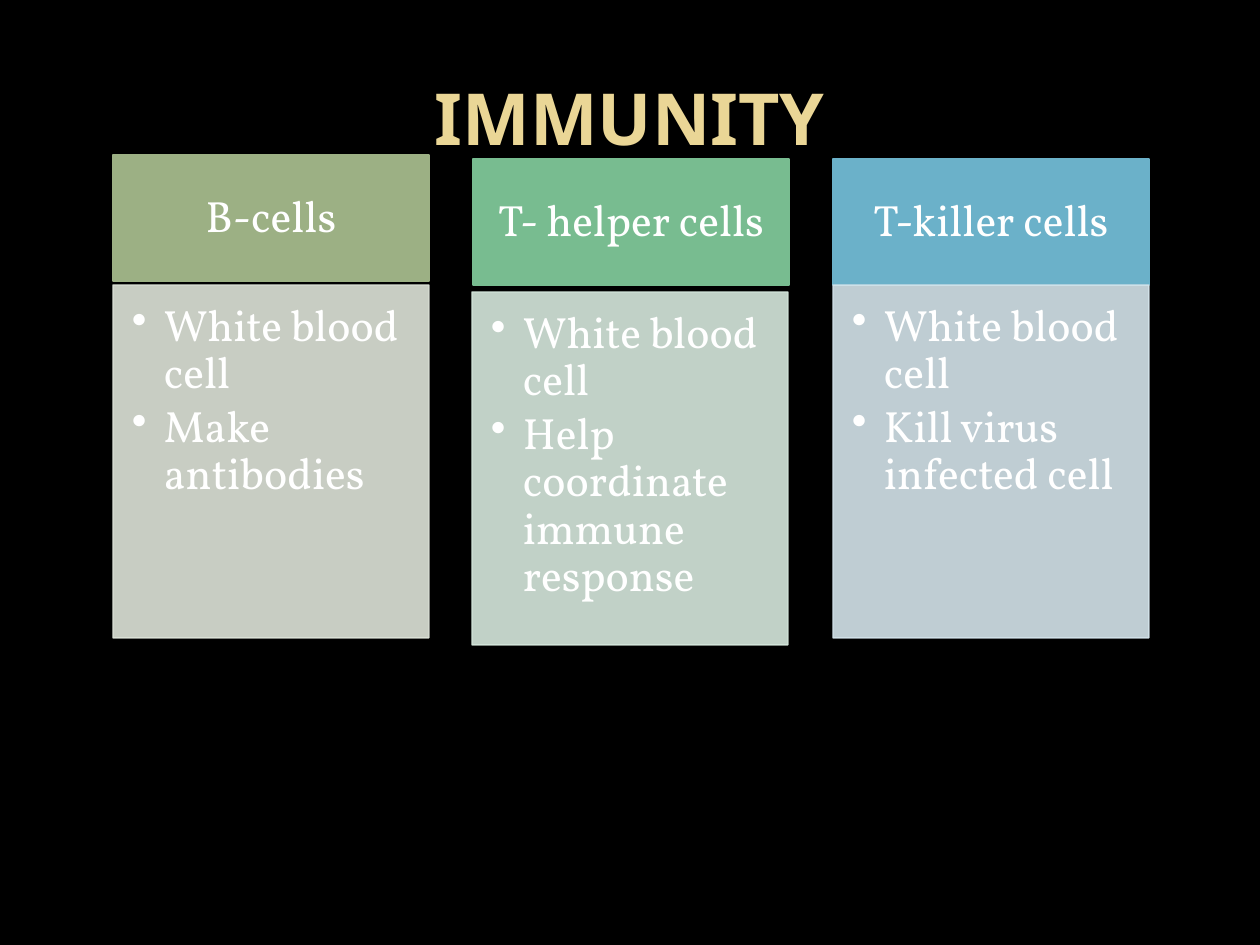
from dataclasses import dataclass

from lxml.etree import SubElement
from pptx import Presentation
from pptx.dml.color import RGBColor
from pptx.enum.shapes import MSO_SHAPE
from pptx.enum.text import MSO_ANCHOR, PP_ALIGN
from pptx.oxml.ns import qn
from pptx.util import Emu, Pt

SCALE = 914400 / 126  # EMU in one px
LEFT, PITCH, WIDTH = 113, 360, 316
HEAD, BODY = 126, 353  # box heights
WHITE = "FFFFFF"


@dataclass
class Column:
    name: str
    facts: list[str]
    dark: str
    pale: str
    top: int = 159
    low: int = 285
    shift: int = 0  # sideways offset of the lower box


COLUMNS = [
    Column("B-cells", ["White blood cell", "Make antibodies"],
           "9CB084", "DEE4D9", top=155),
    Column("T- helper cells", ["White blood cell", "Help coordinate immune response"],
           "78BC90", "D6E8DD", low=292, shift=-1),
    Column("T-killer cells", ["White blood cell", "Kill virus infected cell"],
           "6BB1C9", "D4E4EB"),
]


def px(n: int) -> Emu:
    return Emu(round(n * SCALE))


def rgb(code: str) -> RGBColor:
    return RGBColor.from_string(code)


def style(par, font: str, size: float, color: str, bold: bool = False) -> None:
    par.font.name = font
    par.font.size = Pt(size)
    par.font.bold = bold
    par.font.color.rgb = rgb(color)


def fade(shape, percent: int) -> None:
    """Give the fill and the line the same opacity."""
    for tone in shape._element.spPr.iter(qn("a:srgbClr")):
        SubElement(tone, qn("a:alpha"), val=str(percent * 1000))


def box(slide, x: int, y: int, height: int, color: str, lines: list[str],
        pads: tuple[int, int, int, int], anchor: MSO_ANCHOR, align: PP_ALIGN):
    shape = slide.shapes.add_shape(
        MSO_SHAPE.RECTANGLE, px(x), px(y), px(WIDTH), px(height))
    shape.shadow.inherit = False
    shape.fill.solid()
    shape.fill.fore_color.rgb = rgb(color)
    shape.line.color.rgb = rgb(color)
    shape.line.width = Pt(0.75)
    frame = shape.text_frame
    frame.word_wrap = True
    frame.vertical_anchor = anchor
    (frame.margin_left, frame.margin_top,
     frame.margin_right, frame.margin_bottom) = map(px, pads)
    frame.text = "\n".join(lines)
    for par in frame.paragraphs:
        par.alignment = align
        par.line_spacing = 0.9
        style(par, "Vollkorn", 25, WHITE)
    return shape


def bullet(par) -> None:
    par.level = 1
    par.space_after = Pt(3.75)
    props = par._p.get_or_add_pPr()
    props.set("marL", str(px(32)))
    props.set("indent", str(px(-32)))
    mark = props.makeelement(qn("a:buChar"), {"char": "•"})
    props.insert_element_before(mark, "a:tabLst", "a:defRPr", "a:extLst")


def draw(slide, x: int, col: Column) -> None:
    box(slide, x, col.top, HEAD, col.dark, [col.name],
        (24, 14, 24, 14), MSO_ANCHOR.MIDDLE, PP_ALIGN.CENTER)
    body = box(slide, x + col.shift, col.low, BODY, col.pale, col.facts,
               (19, 19, 24, 28), MSO_ANCHOR.TOP, PP_ALIGN.LEFT)
    fade(body, 90)
    for par in body.text_frame.paragraphs:
        bullet(par)


def main() -> None:
    deck = Presentation()
    deck.slide_width, deck.slide_height = px(1260), px(945)
    slide = deck.slides.add_slide(deck.slide_layouts[5])
    slide.background.fill.solid()
    slide.background.fill.fore_color.rgb = rgb("000000")

    # Title
    title = slide.shapes.title
    title.left, title.top, title.width, title.height = map(px, (63, 38, 1134, 158))
    title.text_frame.text = "IMMUNITY"
    title.text_frame.vertical_anchor = MSO_ANCHOR.MIDDLE
    par = title.text_frame.paragraphs[0]
    par.alignment = PP_ALIGN.CENTER
    style(par, "Noto Sans", 41, "EAD696", bold=True)

    # One column per cell type
    for i, col in enumerate(COLUMNS):
        draw(slide, LEFT + i * PITCH, col)

    deck.save("out.pptx")


if __name__ == "__main__":
    main()
